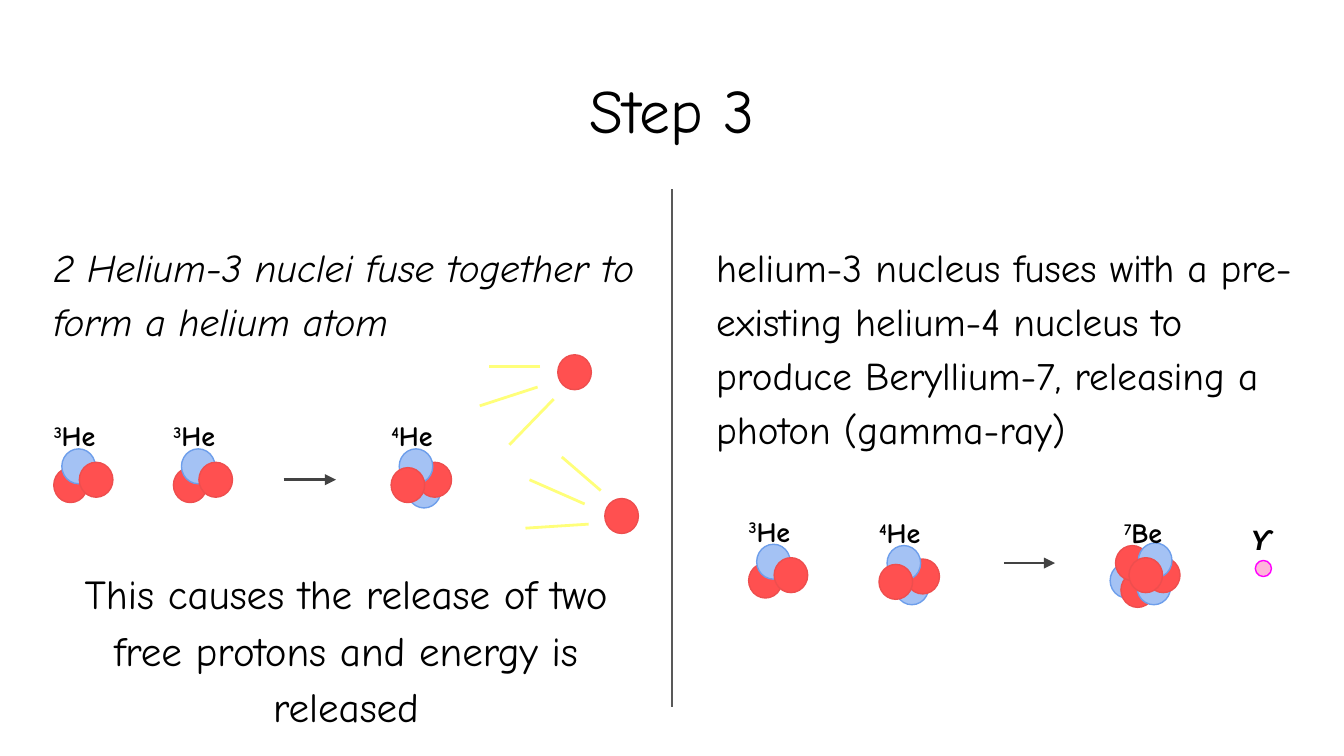
import dataclasses

import lxml.etree
import pptx
import pptx.dml.color
import pptx.enum.shapes
import pptx.enum.text
import pptx.oxml.ns
import pptx.util

RGBColor = pptx.dml.color.RGBColor
BLACK = RGBColor(0x00, 0x00, 0x00)
RED = RGBColor(0xFF, 0x50, 0x50)
RED_EDGE = RGBColor(0xEE, 0x4E, 0x4E)
BLUE = RGBColor(0xA4, 0xC2, 0xF4)
BLUE_EDGE = RGBColor(0x6D, 0x9E, 0xEB)
PINK = RGBColor(0xFF, 0xB6, 0xDA)
MAGENTA = RGBColor(0xFF, 0x00, 0xFF)
YELLOW = RGBColor(0xFF, 0xFF, 0x7A)
GREY = RGBColor(0x59, 0x59, 0x59)
DARK_GREY = RGBColor(0x43, 0x43, 0x43)

EMU_PER_PX = 9144
PAGE_WIDTH = 1000
PADDING = 10
FONT = "Comic Neue"
LEFT = pptx.enum.text.PP_ALIGN.LEFT
CENTER = pptx.enum.text.PP_ALIGN.CENTER


@dataclasses.dataclass(frozen=True)
class Particle:
    width: int
    height: int
    fill: RGBColor
    edge: RGBColor


@dataclasses.dataclass(frozen=True)
class Nucleus:
    mass: str
    symbol: str
    label_dx: int
    label_dy: int
    particles: tuple[tuple[int, int, Particle], ...]


@dataclasses.dataclass(frozen=True)
class Stroke:
    x1: int
    y1: int
    x2: int
    y2: int
    color: RGBColor
    arrow: bool = False


@dataclasses.dataclass(frozen=True)
class Style:
    size: int
    align: pptx.enum.text.PP_ALIGN = LEFT
    font: str = FONT
    bold: bool = False
    italic: bool = False
    space_before: int = 0


PROTON = Particle(25, 26, RED, RED_EDGE)
NEUTRON = Particle(25, 26, BLUE, BLUE_EDGE)
PHOTON = Particle(12, 12, PINK, MAGENTA)

HELIUM_3 = Nucleus("3", "He", -12, -36, (
    (0, 14, PROTON), (6, 0, NEUTRON), (19, 10, PROTON)))
HELIUM_4 = Nucleus("4", "He", -12, -36, (
    (12, 18, NEUTRON), (20, 10, PROTON), (6, 0, NEUTRON), (0, 14, PROTON)))
BERYLLIUM_7 = Nucleus("7", "Be", -3, -34, (
    (0, 15, NEUTRON), (8, 22, PROTON), (20, 20, NEUTRON), (27, 11, PROTON),
    (4, 2, PROTON), (21, 0, NEUTRON), (14, 11, PROTON)))

NUCLEI = (
    (40, 334, HELIUM_3), (129, 334, HELIUM_3), (291, 334, HELIUM_4),
    (557, 405, HELIUM_3), (654, 406, HELIUM_4), (826, 404, BERYLLIUM_7))
FREE_PARTICLES = ((415, 264, PROTON), (450, 371, PROTON), (934, 417, PHOTON))

STROKES = (
    Stroke(500, 141, 500, 526, GREY),
    Stroke(211, 357, 250, 357, DARK_GREY, arrow=True),
    Stroke(747, 419, 785, 419, DARK_GREY, arrow=True),
    Stroke(412, 297, 379, 331, YELLOW),
    Stroke(400, 288, 357, 302, YELLOW),
    Stroke(402, 273, 364, 273, YELLOW),
    Stroke(438, 390, 391, 393, YELLOW),
    Stroke(435, 375, 394, 357, YELLOW),
    Stroke(447, 365, 418, 340, YELLOW))

TITLE = Style(33, CENTER)
BODY = Style(21)
FUSION = Style(21, italic=True)
RELEASE = Style(22, CENTER, space_before=116)
LABEL = Style(15, CENTER, bold=True)
GAMMA = Style(15, font="Arial", bold=True, italic=True)


def px(length: int) -> pptx.util.Emu:
    return pptx.util.Emu(length * EMU_PER_PX)


def add_box(page, left: int, top: int, width: int, height: int):
    box = page.shapes.add_textbox(px(left), px(top), px(width), px(height))
    frame = box.text_frame
    frame.word_wrap = True
    frame.margin_left = frame.margin_right = px(PADDING)
    frame.margin_top = frame.margin_bottom = px(PADDING)
    return frame


def write(para, text: str, style: Style) -> None:
    para.text = text
    para.alignment = style.align
    para.line_spacing = 1.15
    para.space_before = pptx.util.Pt(style.space_before)
    para.font.name = style.font
    para.font.size = pptx.util.Pt(style.size)
    para.font.bold = style.bold
    para.font.italic = style.italic
    para.font.color.rgb = BLACK


def draw_particle(page, left: int, top: int, particle: Particle) -> None:
    circle = page.shapes.add_shape(
        pptx.enum.shapes.MSO_SHAPE.OVAL,
        px(left), px(top), px(particle.width), px(particle.height))
    circle.shadow.inherit = False
    circle.fill.solid()
    circle.fill.fore_color.rgb = particle.fill
    circle.line.color.rgb = particle.edge
    circle.line.width = pptx.util.Pt(0.75)


def draw_nucleus(page, left: int, top: int, nucleus: Nucleus) -> None:
    for dx, dy, particle in nucleus.particles:
        draw_particle(page, left + dx, top + dy, particle)
    frame = add_box(page, left + nucleus.label_dx, top + nucleus.label_dy, 55, 45)
    para = frame.paragraphs[0]
    write(para, nucleus.mass, LABEL)
    para.runs[0].font._element.set("baseline", "30000")
    span = para.add_run()
    span.text = nucleus.symbol


def draw_stroke(page, stroke: Stroke) -> None:
    connector = page.shapes.add_connector(
        pptx.enum.shapes.MSO_CONNECTOR.STRAIGHT,
        px(stroke.x1), px(stroke.y1), px(stroke.x2), px(stroke.y2))
    connector.line.color.rgb = stroke.color
    connector.line.width = pptx.util.Pt(1.5)
    if stroke.arrow:
        outline = connector.line._get_or_add_ln()
        lxml.etree.SubElement(
            outline, pptx.oxml.ns.qn("a:tailEnd"), type="triangle")
    lxml.etree.SubElement(
        connector._element.spPr, pptx.oxml.ns.qn("a:effectLst"))


def main() -> None:
    deck = pptx.Presentation()
    deck.slide_width = px(PAGE_WIDTH)
    deck.slide_height = pptx.util.Emu(px(PAGE_WIDTH) * 9 // 16)
    page = deck.slides.add_slide(deck.slide_layouts[6])

    write(add_box(page, 0, 35, PAGE_WIDTH, 76).paragraphs[0], "Step 3", TITLE)

    fusion = add_box(page, 30, 166, 455, 344)
    write(fusion.paragraphs[0],
          "2 Helium-3 nuclei fuse together to form a helium atom", FUSION)
    write(fusion.add_paragraph(),
          "This causes the release of two free protons and energy is released",
          RELEASE)

    write(add_box(page, 523, 166, 455, 177).paragraphs[0],
          "helium-3 nucleus fuses with a pre-existing helium-4 nucleus to "
          "produce Beryllium-7, releasing a photon (gamma-ray)", BODY)

    for stroke in STROKES:
        draw_stroke(page, stroke)
    for left, top, nucleus in NUCLEI:
        draw_nucleus(page, left, top, nucleus)
    for left, top, particle in FREE_PARTICLES:
        draw_particle(page, left, top, particle)

    write(add_box(page, 921, 375, 44, 45).paragraphs[0], "ϒ", GAMMA)

    deck.save("out.pptx")


if __name__ == "__main__":
    main()
